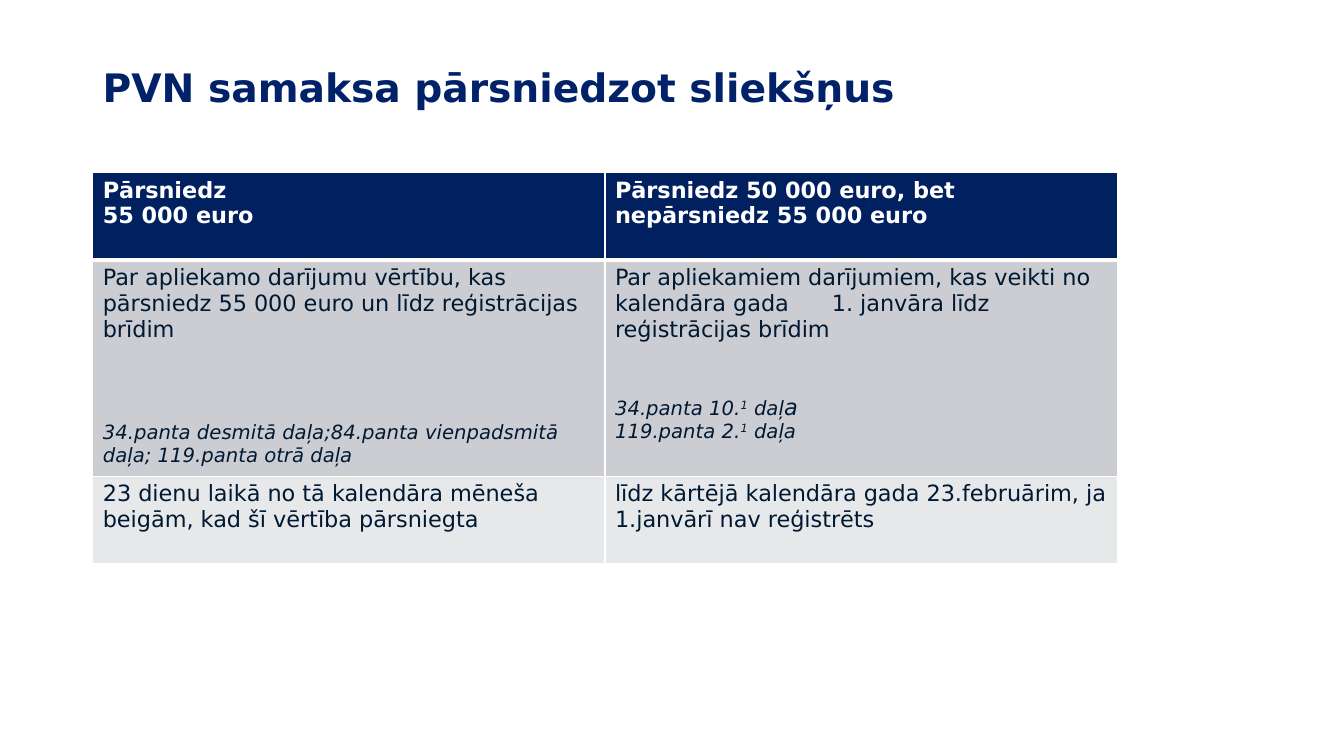
import pptx
import pptx.dml.color
import pptx.enum.text
import pptx.oxml
import pptx.oxml.ns
import pptx.util
from pptx.util import Inches

COLORS = {
    "title": "012269",
    "header": "002060",
    "body": "CCCDD2",
    "deadline": "E7E8EA",
    "text": "001933",
    "white": "FFFFFF",
}
HEADER = {"size": 16, "bold": True, "color": "white"}
BODY = {"size": 16, "bold": False, "color": "text"}
LAW = {**BODY, "size": 14, "italic": True}
LAW_LARGE = {**LAW, "size": 16}
LAW_SUPER = {**LAW, "baseline": 30000}


def paragraph(*runs, before=0, tab=None):
    """Describe one paragraph by its runs, space before and tab stop."""
    return {"runs": runs, "before": before, "tab": tab}


class SlideBuilder:
    """Hold the slide style and draw its elements."""

    font = "DejaVu Sans"

    def __init__(self, slide):
        self.slide = slide

    def style_run(self, run, style):
        formats = {"name": self.font, "size": pptx.util.Pt(style["size"])}
        formats.update({key: style[key] for key in ("bold", "italic") if key in style})
        for name, value in formats.items():
            setattr(run.font, name, value)
        run.font.color.rgb = pptx.dml.color.RGBColor.from_string(COLORS[style["color"]])
        if "baseline" in style:
            run._r.get_or_add_rPr().set("baseline", str(style["baseline"]))

    def add_text(self, frame, paragraphs):
        for index, content in enumerate(paragraphs):
            line = frame.add_paragraph() if index else frame.paragraphs[0]
            if content["before"]:
                line.space_before = pptx.util.Pt(content["before"])
            if content["tab"]:
                line._p.get_or_add_pPr().append(pptx.oxml.parse_xml(
                    f'<a:tabLst {pptx.oxml.ns.nsdecls("a")}>'
                    f'<a:tab pos="{Inches(content["tab"])}" algn="l"/></a:tabLst>'))
            for text, style in content["runs"]:
                run = line.add_run()
                run.text = text
                self.style_run(run, style)

    def title(self, text, left, top, width, height):
        box = self.slide.shapes.add_textbox(
            Inches(left), Inches(top), Inches(width), Inches(height))
        box.text_frame.word_wrap = True
        box.text_frame.vertical_anchor = pptx.enum.text.MSO_ANCHOR.MIDDLE
        style = {"size": 28, "bold": True, "color": "title"}
        self.add_text(box.text_frame, [paragraph((text, style))])
        box.text_frame.paragraphs[0].line_spacing = 0.9

    def borders(self, cell, widths):
        for side, width in widths.items():
            cell._tc.get_or_add_tcPr().append(pptx.oxml.parse_xml(
                f'<a:ln{side} {pptx.oxml.ns.nsdecls("a")} w="{pptx.util.Pt(width)}">'
                f'<a:solidFill><a:srgbClr val="{COLORS["white"]}"/></a:solidFill>'
                f'</a:ln{side}>'))

    def table(self, rows, left, top, column_width, heights, fills):
        columns = len(rows[0])
        table = self.slide.shapes.add_table(
            len(rows), columns, Inches(left), Inches(top),
            Inches(column_width * columns), Inches(sum(heights))).table
        for column in table.columns:
            column.width = Inches(column_width)
        for r, (contents, height, fill) in enumerate(zip(rows, heights, fills)):
            table.rows[r].height = Inches(height)
            for c, paragraphs in enumerate(contents):
                cell = table.cell(r, c)
                self.borders(cell, {"L": 1, "R": 1, "T": 3 if r == 1 else 1,
                                    "B": 3 if r == 0 else 1})
                cell.fill.solid()
                cell.fill.fore_color.rgb = pptx.dml.color.RGBColor.from_string(COLORS[fill])
                self.add_text(cell.text_frame, paragraphs)


def main():
    presentation = pptx.Presentation()
    presentation.slide_width = Inches(13.33)
    presentation.slide_height = Inches(7.5)
    builder = SlideBuilder(presentation.slides.add_slide(presentation.slide_layouts[6]))
    builder.title("PVN samaksa pārsniedzot sliekšņus", 0.92, 0.4, 10.58, 0.99)

    thresholds = [
        [paragraph(("Pārsniedz", HEADER)), paragraph(("55 000 euro", HEADER))],
        [paragraph(("Pārsniedz 50 000 euro, bet nepārsniedz 55 000 euro", HEADER))],
    ]
    taxed_value = [
        [
            paragraph(("Par apliekamo darījumu vērtību, kas pārsniedz 55 000 euro "
                       "un līdz reģistrācijas brīdim", BODY)),
            paragraph(("34.panta desmitā daļa;84.panta vienpadsmitā daļa; "
                       "119.panta otrā daļa", LAW), before=56),
        ],
        [
            paragraph(("Par apliekamiem darījumiem, kas veikti no kalendāra gada\t"
                       "1. janvāra līdz reģistrācijas brīdim", BODY), tab=2.15),
            paragraph(("34.panta 10.", LAW), ("1", LAW_SUPER), (" daļ", LAW),
                      ("a", LAW_LARGE), before=37),
            paragraph(("119.panta 2.", LAW), ("1", LAW_SUPER), (" daļa", LAW)),
        ],
    ]
    deadlines = [
        [paragraph(("23 dienu laikā no tā kalendāra mēneša beigām, "
                    "kad šī vērtība pārsniegta", BODY))],
        [paragraph(("līdz kārtējā kalendāra gada 23.februārim, "
                    "ja 1.janvārī nav reģistrēts", BODY))],
    ]
    builder.table([thresholds, taxed_value, deadlines], 0.92, 1.71, 5.08,
                  [0.87, 2.09, 0.87], ["header", "body", "deadline"])
    presentation.save("out.pptx")


if __name__ == "__main__":
    main()
